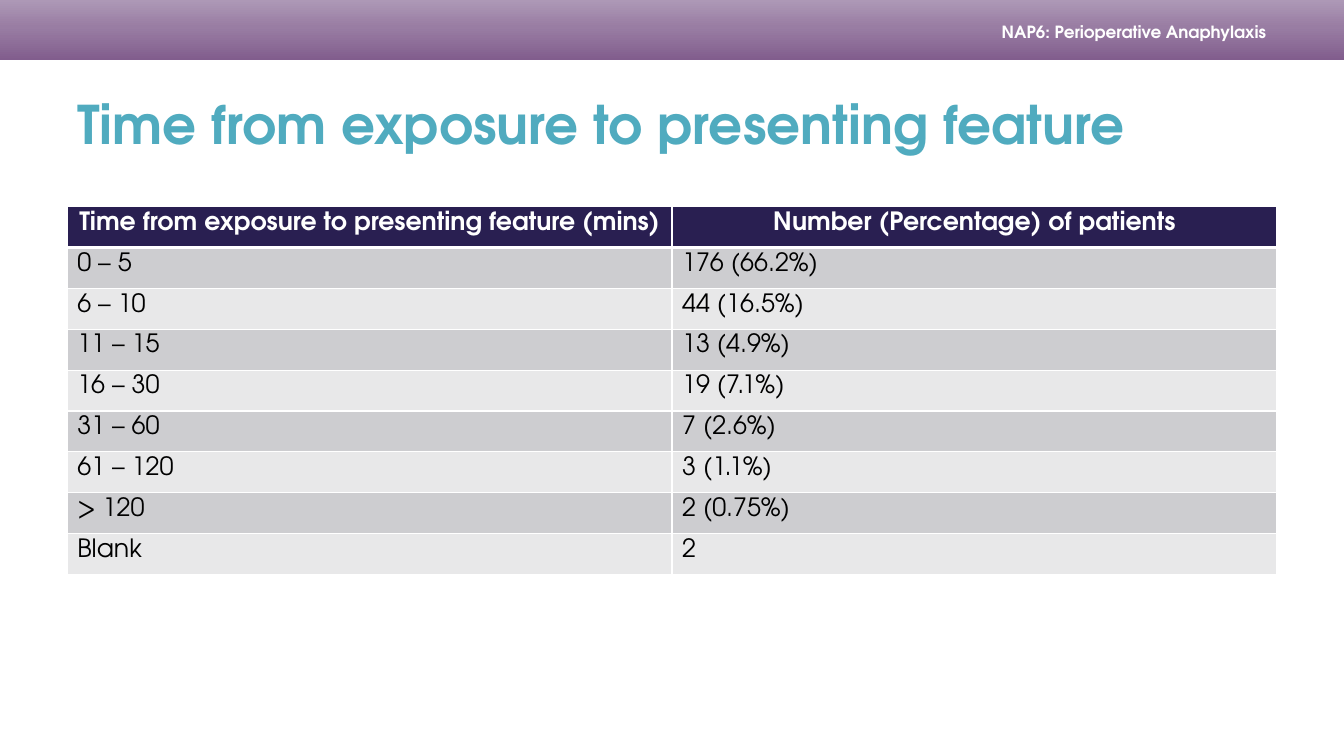
from copy import deepcopy

from lxml.etree import SubElement
from pptx import Presentation
from pptx.dml.color import RGBColor
from pptx.enum.shapes import MSO_SHAPE
from pptx.enum.text import MSO_ANCHOR, PP_ALIGN
from pptx.oxml.ns import qn
from pptx.util import Inches, Pt

HEADING = "Time from exposure to presenting feature"
RUNNING_HEAD = "NAP6: Perioperative Anaphylaxis"
ONSET_TIMES = [
    ("Time from exposure to presenting feature (mins)", "Number (Percentage) of patients"),
    ("0 – 5", "176 (66.2%)"),
    ("6 – 10", "44 (16.5%)"),
    ("11 – 15", "13 (4.9%)"),
    ("16 – 30", "19 (7.1%)"),
    ("31 – 60", "7 (2.6%)"),
    ("61 – 120", "3 (1.1%)"),
    ("> 120", "2 (0.75%)"),
    ("Blank", "2"),
]
THEME = {
    "face": "TeX Gyre Adventor",
    "band": [(0, "815D8D"), (0.55, "997DA3"), (1, "AD98B6")],
    "header": "291F51",
    "stripes": ("E8E8E9", "CDCDD0"),
    "rule": "FFFFFF",
    "heading": {"size": 38, "color": "50ABBF", "bold": True},
    "running": {"size": 12, "color": "FFFFFF", "bold": True},
    "column": {"size": 18, "color": "FFFFFF", "bold": True},
    "entry": {"size": 18, "color": "000000", "bold": False},
}
WIDTH, HEIGHT = Inches(13.33), Inches(7.5)
MARGIN = int(WIDTH * 0.05)
CONTENT = WIDTH - 2 * MARGIN
BAND_HEIGHT = int(HEIGHT * 0.08)
TABLE_TOP, TABLE_HEIGHT = Inches(2.05), Inches(3.65)


def set_all(target, values):
    for name, value in values.items():
        setattr(target, name, value)


def write(frame, wording, style, align=PP_ALIGN.LEFT):
    paragraph = frame.paragraphs[0]
    paragraph.alignment = align
    run = paragraph.add_run()
    run.text = wording
    set_all(run.font, {"name": THEME["face"], "size": Pt(style["size"]), "bold": style["bold"]})
    run.font.color.rgb = RGBColor.from_string(style["color"])


def rule_cell(cell, top, bottom):
    properties = cell._tc.get_or_add_tcPr()
    for side, points in (("L", 1), ("R", 1), ("T", top), ("B", bottom)):
        line = SubElement(properties, qn(f"a:ln{side}"), w=str(Pt(points)))
        SubElement(SubElement(line, qn("a:solidFill")), qn("a:srgbClr"), val=THEME["rule"])


def add_band(slide):
    band = slide.shapes.add_shape(MSO_SHAPE.RECTANGLE, 0, 0, WIDTH, BAND_HEIGHT)
    band.shadow.inherit = False
    band.line.fill.background()
    band.fill.gradient()
    band.fill.gradient_angle = 90
    stops = band._element.spPr.find(".//" + qn("a:gsLst"))
    stops.append(deepcopy(stops[-1]))
    for stop, (position, color) in zip(band.fill.gradient_stops, THEME["band"]):
        stop.position = position
        stop.color.rgb = RGBColor.from_string(color)

    running = slide.shapes.add_textbox(Inches(8.35), Inches(0.18), Inches(4.45), Inches(0.28))
    set_all(running.text_frame, {"word_wrap": True, "vertical_anchor": MSO_ANCHOR.MIDDLE,
                                 "margin_right": Inches(0.24)})
    write(running.text_frame, RUNNING_HEAD, THEME["running"], PP_ALIGN.RIGHT)


def add_heading(slide):
    heading = slide.shapes.title
    set_all(heading, {"left": MARGIN, "top": BAND_HEIGHT, "width": CONTENT, "height": Inches(1.25)})
    heading.text_frame.vertical_anchor = MSO_ANCHOR.MIDDLE
    write(heading.text_frame, HEADING, THEME["heading"])


def add_onset_table(slide):
    rows, columns = len(ONSET_TIMES), len(ONSET_TIMES[0])
    table = slide.shapes.add_table(rows, columns, MARGIN, TABLE_TOP, CONTENT, TABLE_HEIGHT).table
    table.horz_banding = False
    for r, entries in enumerate(ONSET_TIMES):
        table.rows[r].height = TABLE_HEIGHT // rows
        is_header = r == 0
        fill = THEME["header"] if is_header else THEME["stripes"][r % 2]
        style = THEME["column" if is_header else "entry"]
        align = PP_ALIGN.CENTER if is_header else PP_ALIGN.LEFT
        for c, entry in enumerate(entries):
            cell = table.cell(r, c)
            rule_cell(cell, 3 if r == 1 else 1, 3 if is_header else 1)
            cell.fill.solid()
            cell.fill.fore_color.rgb = RGBColor.from_string(fill)
            set_all(cell, {"margin_top": Inches(0.05), "margin_bottom": Inches(0.05)})
            write(cell.text_frame, entry, style, align)


def main():
    deck = Presentation()
    set_all(deck, {"slide_width": WIDTH, "slide_height": HEIGHT})
    slide = deck.slides.add_slide(deck.slide_layouts[5])
    add_band(slide)
    add_heading(slide)
    add_onset_table(slide)
    deck.save("out.pptx")


if __name__ == "__main__":
    main()
